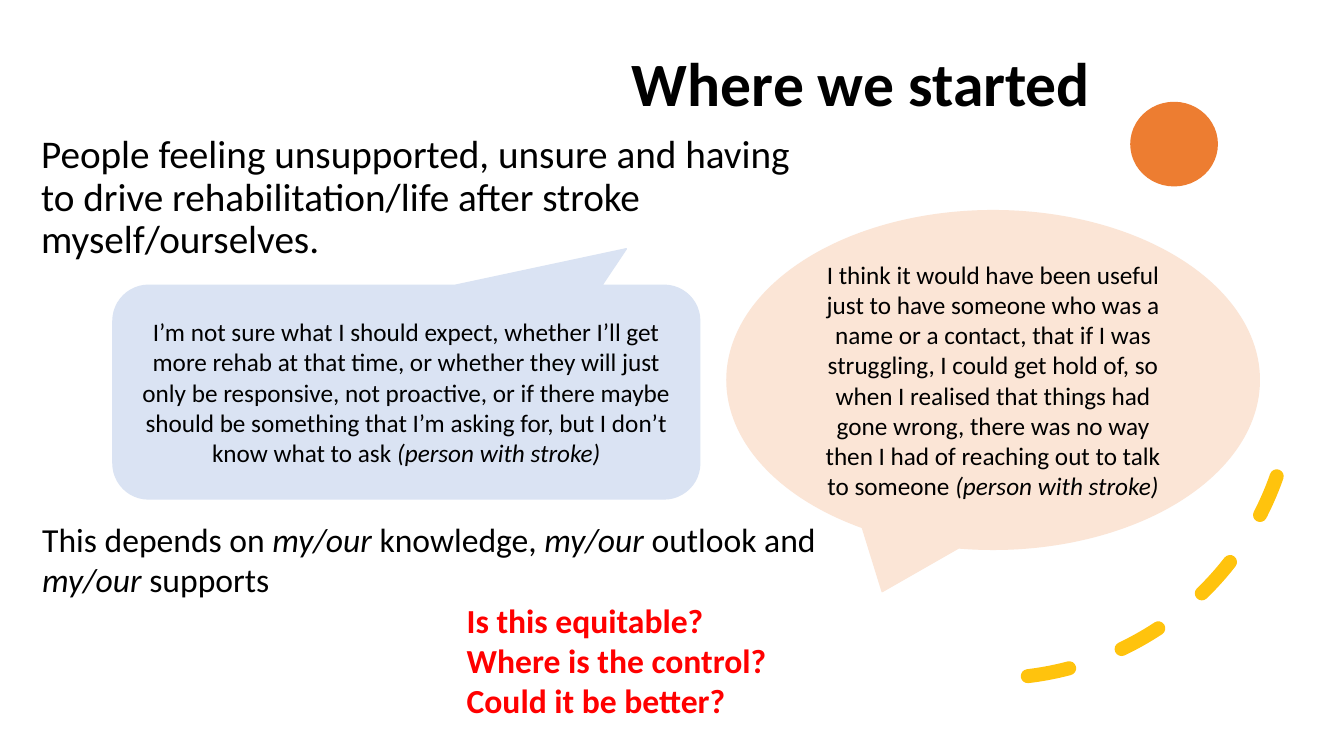
"""Build the slide on how stroke rehabilitation felt at the start."""
from dataclasses import dataclass

from lxml import etree
from pptx import Presentation
from pptx import util as u
from pptx.dml.color import RGBColor
from pptx.enum import dml, shapes, text
from pptx.oxml.ns import qn

FONT = "Calibri"
SPEAKER = "(person with stroke)"


@dataclass(frozen=True)
class Box:
    left: float
    top: float
    width: float
    height: float

    def lengths(self) -> tuple:
        return tuple(u.Inches(n) for n in (self.left, self.top, self.width, self.height))


@dataclass(frozen=True)
class Piece:
    words: str
    italic: bool = False


@dataclass(frozen=True)
class Line:
    pieces: tuple[Piece, ...]
    size: int
    color: str = "000000"
    bold: bool = False
    spacing: float = 1.0
    indent: float = 0
    centered: bool = False


@dataclass(frozen=True)
class TextBlock:
    box: Box
    lines: tuple[Line, ...]
    anchor: text.MSO_ANCHOR = text.MSO_ANCHOR.TOP
    before: int = 0


@dataclass(frozen=True)
class Figure:
    kind: shapes.MSO_SHAPE
    box: Box
    fill: str
    quote: str = ""
    adjustments: tuple[float, ...] = ()


TEXT_BLOCKS = (
    TextBlock(Box(6.17, 0.13, 5.9, 1.45),
              (Line((Piece("Where we started"),), 44, bold=True, spacing=0.9),),
              text.MSO_ANCHOR.MIDDLE),
    TextBlock(Box(0.31, 1.29, 7.9, 1.6),
              (Line((Piece("People feeling unsupported, unsure and having to drive "
                           "rehabilitation/life after stroke myself/ourselves."),),
                    28, spacing=0.9),),
              before=10),
    TextBlock(Box(0.32, 5.1, 8.22, 2.12),
              (Line((Piece("This depends on"), Piece(" my/our ", True), Piece("knowledge, "),
                     Piece("my/our", True), Piece(" outlook and "),
                     Piece("my/our", True), Piece(" supports")), 24),
               *(Line((Piece(question),), 24, "FF0000", bold=True, indent=4.21)
                 for question in ("Is this equitable?", "Where is the control?",
                                  "Could it be better?")))),
)

FIGURES = (
    Figure(shapes.MSO_SHAPE.OVAL, Box(11.21, 1.01, 0.87, 0.84), "ED7D31"),
    Figure(shapes.MSO_SHAPE.ROUNDED_RECTANGULAR_CALLOUT, Box(1.12, 2.83, 5.82, 2.12), "DAE3F3",
           "I’m not sure what I should expect, whether I’ll get more rehab at that time, "
           "or whether they will just only be responsive, not proactive, or if there maybe "
           "should be something that I’m asking for, but I don’t know what to ask ",
           (0.375, -0.671, 0.167)),
    Figure(shapes.MSO_SHAPE.OVAL_CALLOUT, Box(7.21, 2.09, 5.28, 3.36), "FBE5D6",
           "I think it would have been useful just to have someone who was a name or a "
           "contact, that if I was struggling, I could get hold of, so when I realised that "
           "things had gone wrong, there was no way then I had of reaching out to talk to "
           "someone "),
)


def paint(color_format, color: str) -> None:
    color_format.rgb = RGBColor.from_string(color)


def write_line(paragraph, line: Line) -> None:
    paragraph.line_spacing = line.spacing
    paragraph.alignment = text.PP_ALIGN.CENTER if line.centered else text.PP_ALIGN.LEFT
    if line.indent:
        paragraph._p.get_or_add_pPr().set("marL", str(u.Inches(line.indent)))
    for piece in line.pieces:
        run = paragraph.add_run()
        run.text = piece.words
        run.font.name = FONT
        run.font.size = u.Pt(line.size)
        run.font.bold = line.bold
        run.font.italic = piece.italic
        paint(run.font.color, line.color)


def write_lines(text_frame, lines: tuple[Line, ...], anchor, before: int = 0) -> None:
    text_frame.word_wrap = True
    text_frame.vertical_anchor = anchor
    for index, line in enumerate(lines):
        paragraph = text_frame.add_paragraph() if index else text_frame.paragraphs[0]
        paragraph.space_before = u.Pt(before)
        write_line(paragraph, line)


def add_text_block(slide, block: TextBlock) -> None:
    shape = slide.shapes.add_textbox(*block.box.lengths())
    write_lines(shape.text_frame, block.lines, block.anchor, block.before)


def add_figure(slide, figure: Figure) -> None:
    shape = slide.shapes.add_shape(figure.kind, *figure.box.lengths())
    shape.shadow.inherit = False
    for index, value in enumerate(figure.adjustments):
        shape.adjustments[index] = value
    shape.fill.solid()
    paint(shape.fill.fore_color, figure.fill)
    if not figure.quote:
        shape.line.fill.background()
        return
    paint(shape.line.color, figure.fill)
    shape.line.width = u.Pt(1)
    quote = Line((Piece(figure.quote), Piece(SPEAKER, True)), 18, centered=True)
    write_lines(shape.text_frame, (quote,), text.MSO_ANCHOR.MIDDLE)


def add_dashed_arc(slide, box: Box) -> None:
    arc = slide.shapes.add_shape(shapes.MSO_SHAPE.ARC, *box.lengths())
    arc.shadow.inherit = False
    arc.adjustments[0], arc.adjustments[1] = 162, 200.93
    arc.rotation = 353.2
    arc._element.spPr.find(qn("a:xfrm")).set("flipV", "1")
    arc.fill.background()
    paint(arc.line.color, "FFC000")
    arc.line.width = u.Pt(10)
    arc.line.dash_style = dml.MSO_LINE.DASH
    outline = arc._element.spPr.find(qn("a:ln"))
    outline.set("cap", "rnd")
    color = outline.find(f"{qn('a:solidFill')}/{qn('a:srgbClr')}")
    etree.SubElement(color, qn("a:alpha")).set("val", "95000")


def main() -> None:
    presentation = Presentation()
    presentation.slide_width = u.Inches(13.33)
    presentation.slide_height = u.Inches(7.5)
    slide = presentation.slides.add_slide(presentation.slide_layouts[6])
    add_dashed_arc(slide, Box(6.85, 0.75, 5.98, 5.98))
    for figure in FIGURES:
        add_figure(slide, figure)
    for block in TEXT_BLOCKS:
        add_text_block(slide, block)
    presentation.save("out.pptx")


if __name__ == "__main__":
    main()
